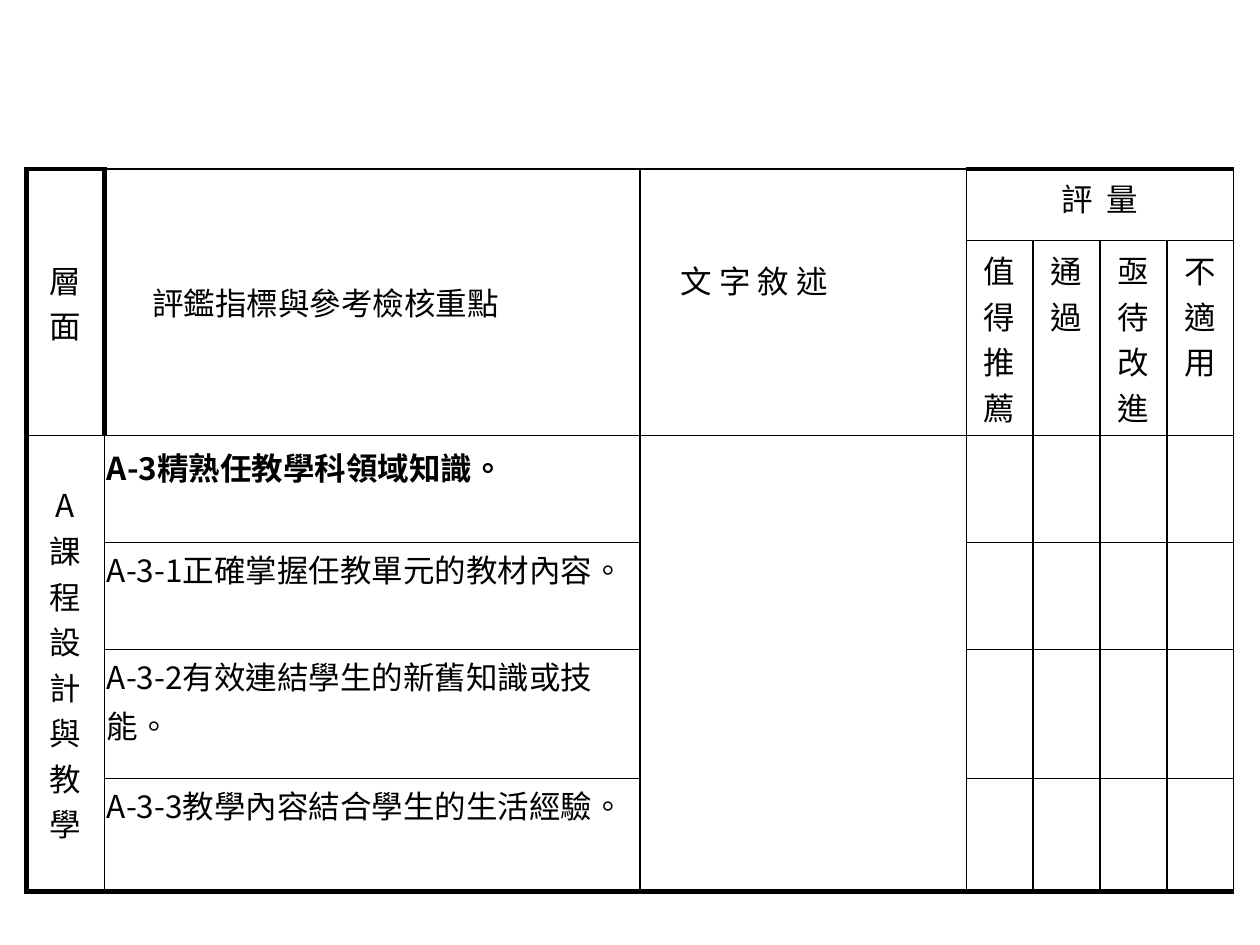
from dataclasses import dataclass

from lxml import etree
from pptx import Presentation
from pptx.dml.color import RGBColor
from pptx.enum.text import MSO_ANCHOR, PP_ALIGN
from pptx.oxml.ns import qn
from pptx.util import Pt

LEFT, CENTER, JUSTIFY = PP_ALIGN.LEFT, PP_ALIGN.CENTER, PP_ALIGN.JUSTIFY
TOP, MIDDLE = MSO_ANCHOR.TOP, MSO_ANCHOR.MIDDLE


@dataclass(frozen=True)
class Theme:
    ink: RGBColor = RGBColor(0, 0, 0)
    paper: RGBColor = RGBColor(255, 255, 255)
    size: float = 18
    heading_font: str = "Noto Sans CJK SC"
    code_font: str = "Noto Sans CJK TC"
    item_font: str = "Times New Roman"
    thick: float = 3
    normal: float = 1
    thin: float = 0.5


THEME = Theme()
COLUMNS = [44.6, 306, 186.5] + [38.2] * 4
ROWS = [41, 104.4, 61.2, 61.2, 73.4, 64.8]
HEADER_ROWS = 2
RATINGS_COLUMN = 3
RATINGS = [["值得推薦"], ["通過"], ["亟待", "改", "進"], ["不適用"]]
ITEMS = [
    ("A-3-1", ["正確掌握任教單元的教材內容。"]),
    ("A-3-2", ["有效連結學生的新舊知識或技", "能。"]),
    ("A-3-3", ["教學內容結合學生的生活經驗。"]),
]


def horizontal_weight(edge, column):
    if edge == len(ROWS):
        return THEME.thick
    if edge == 0:
        return THEME.normal if column in (1, 2) else THEME.thick
    return THEME.thin if edge > HEADER_ROWS else THEME.normal


def vertical_weight(edge, row):
    if edge == 0:
        return THEME.thick
    if edge == 1:
        return THEME.thick if row < HEADER_ROWS else THEME.thin
    return THEME.normal


def draw_border(cell, side, weight):
    border = etree.SubElement(cell._tc.get_or_add_tcPr(), qn(f"a:ln{side}"), w=str(Pt(weight)))
    fill = etree.SubElement(border, qn("a:solidFill"))
    etree.SubElement(fill, qn("a:srgbClr"), val=str(THEME.ink))


def add_block(table, row, column, height=1, width=1):
    weights = {
        "L": vertical_weight(column, row),
        "R": vertical_weight(column + width, row),
        "T": horizontal_weight(row, column),
        "B": horizontal_weight(row + height, column),
    }
    for r in range(row, row + height):
        for c in range(column, column + width):
            cell = table.cell(r, c)
            for side, weight in weights.items():
                draw_border(cell, side, weight)
            cell.fill.solid()
            cell.fill.fore_color.rgb = THEME.paper
    block = table.cell(row, column)
    if height * width > 1:
        block.merge(table.cell(row + height - 1, column + width - 1))
    return block


def write_text(cell, lines, align=CENTER, anchor=TOP, margins=(7.2, 3.6, 7.2, 3.6),
               bold=False, line_spacing=None, gap=0, tracking=0):
    cell.vertical_anchor = anchor
    cell.margin_left, cell.margin_top, cell.margin_right, cell.margin_bottom = map(Pt, margins)
    for index, line in enumerate(lines):
        paragraph = cell.text_frame.paragraphs[0] if index == 0 else cell.text_frame.add_paragraph()
        paragraph.alignment = align
        if line_spacing:
            paragraph.line_spacing = Pt(line_spacing)
        if index and gap:
            paragraph.space_before = Pt(gap)
        runs = [(line, THEME.heading_font)] if isinstance(line, str) else line
        for text, font in runs:
            run = paragraph.add_run()
            run.text = text
            run.font.name = font
            run.font.size = Pt(THEME.size)
            run.font.bold = bold
            run.font.color.rgb = THEME.ink
            properties = run.font._element
            properties.set("lang", "zh-TW")
            if tracking:
                properties.set("spc", str(tracking * 100))
            east_asian = THEME.code_font if font == THEME.item_font else font
            etree.SubElement(properties, qn("a:ea"), typeface=east_asian)


def item_lines(code, texts):
    lines = [[(text, THEME.item_font)] for text in texts]
    lines[0].insert(0, (code, THEME.code_font))
    return lines


def add_header(table):
    write_text(add_block(table, 0, 0, HEADER_ROWS), ["層面"], anchor=MIDDLE)
    write_text(add_block(table, 0, 1, HEADER_ROWS), ["評鑑指標與參考檢核重點"],
               align=LEFT, anchor=MIDDLE, margins=(27.4, 3.6, 7.2, 3.6))
    write_text(add_block(table, 0, 2, HEADER_ROWS), ["文 字 敘 述"],
               align=LEFT, anchor=MIDDLE, margins=(23.3, 3.6, 7.2, 29.7))
    write_text(add_block(table, 0, RATINGS_COLUMN, width=len(RATINGS)), ["評 量"], tracking=2)
    for column, rating in enumerate(RATINGS, RATINGS_COLUMN):
        write_text(add_block(table, 1, column), rating)


def add_indicators(table):
    body_height = len(ROWS) - HEADER_ROWS
    write_text(add_block(table, HEADER_ROWS, 0, body_height), list("A課程設計與教學"), anchor=MIDDLE)
    write_text(add_block(table, HEADER_ROWS, 1), item_lines("A-3", ["精熟任教學科領域知識。"]),
               align=JUSTIFY, anchor=MIDDLE, margins=(1.4, 0, 1.4, 17), bold=True, line_spacing=17)
    add_block(table, HEADER_ROWS, 2, body_height)
    for row, (code, texts) in enumerate(ITEMS, HEADER_ROWS + 1):
        write_text(add_block(table, row, 1), item_lines(code, texts), align=LEFT,
                   margins=(1.4, 14, 1.4, 0), line_spacing=14, gap=14)
    for row in range(HEADER_ROWS, len(ROWS)):
        for column in range(RATINGS_COLUMN, len(COLUMNS)):
            add_block(table, row, column)


def add_evaluation_table(slide, left, top):
    frame = slide.shapes.add_table(len(ROWS), len(COLUMNS), Pt(left), Pt(top),
                                   Pt(sum(COLUMNS)), Pt(sum(ROWS)))
    table = frame.table
    table.first_row = table.horz_banding = False
    for column, width in zip(table.columns, COLUMNS):
        column.width = Pt(width)
    for row, height in zip(table.rows, ROWS):
        row.height = Pt(height)
    add_header(table)
    add_indicators(table)


def main():
    presentation = Presentation()
    presentation.slide_width, presentation.slide_height = Pt(720), Pt(540)
    slide = presentation.slides.add_slide(presentation.slide_layouts[6])
    add_evaluation_table(slide, left=15.1, top=96.5)
    presentation.save("out.pptx")


if __name__ == "__main__":
    main()
